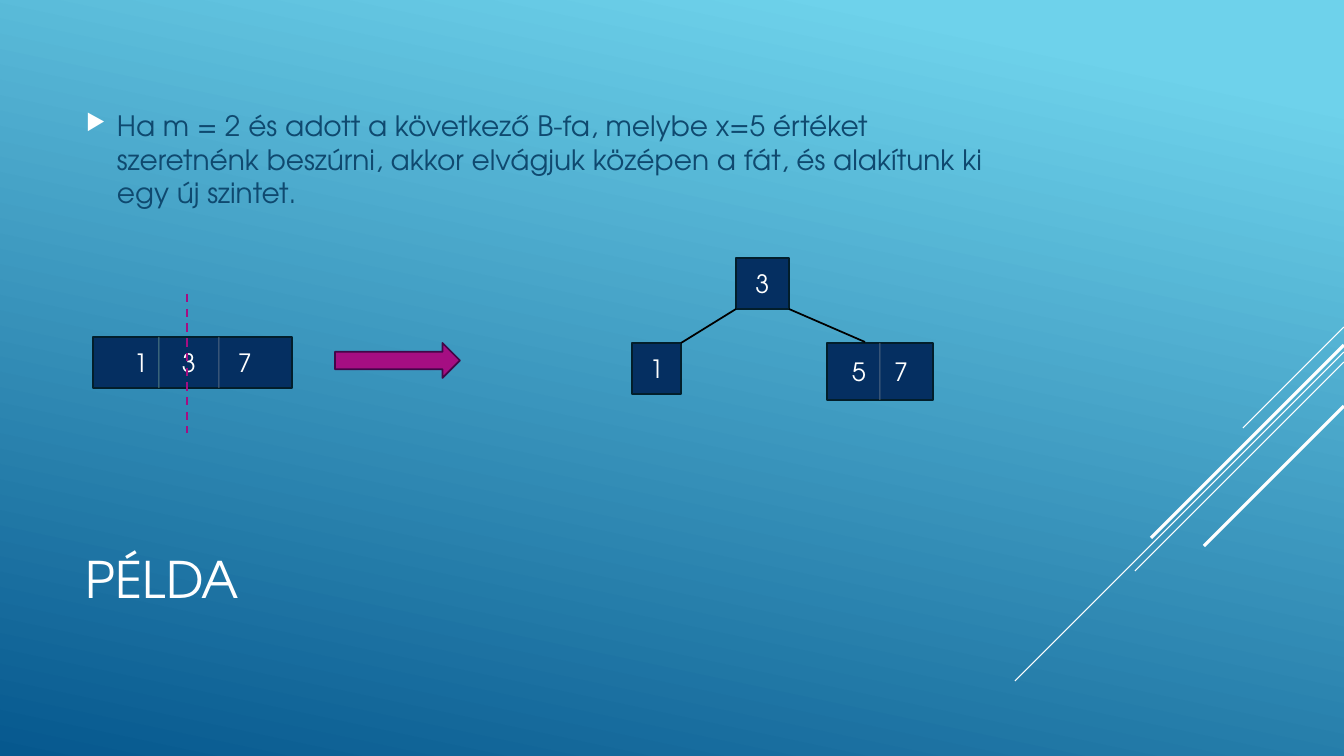
from dataclasses import dataclass
from typing import Optional

from lxml import etree
from pptx import Presentation
from pptx import util as u
from pptx.dml.color import RGBColor
from pptx.enum import dml, shapes, text
from pptx.oxml import ns

SCALE = 914400 / 100.8
FONT = "TeX Gyre Adventor"
WHITE = RGBColor(0xFF, 0xFF, 0xFF)
BLACK = RGBColor(0, 0, 0)
SKY = RGBColor(0x6E, 0xD2, 0xEB)
SEA = RGBColor(0x06, 0x58, 0x8E)
INK = RGBColor(0x0F, 0x49, 0x6F)
NAVY = RGBColor(0x05, 0x2F, 0x61)
EDGE = RGBColor(0x02, 0x1E, 0x2B)
PINK = RGBColor(0xA5, 0x0E, 0x82)
PLUM = RGBColor(0x42, 0x06, 0x48)
SAGE = RGBColor(0x8A, 0xB7, 0xA1)
GREY = RGBColor(0x89, 0x91, 0x9C)


@dataclass
class Box:
    x: int
    y: int
    w: int
    h: int


@dataclass
class Node:
    box: Box
    keys: str
    tabs: tuple[int, ...] = ()


@dataclass
class Line:
    x1: int
    y1: int
    x2: int
    y2: int
    color: RGBColor
    width: float
    dash: Optional[dml.MSO_LINE] = None
    alpha: int = 100


STREAKS = [
    Line(1344, 327, 1243, 428, WHITE, 0.75),
    Line(1344, 352, 1015, 681, WHITE, 0.75),
    Line(1344, 362, 1135, 571, WHITE, 0.75),
    Line(1344, 345, 1151, 538, WHITE, 2.25),
    Line(1344, 406, 1204, 546, WHITE, 2.25),
]
ROOT = Node(Box(736, 258, 53, 51), "3")
LEFT = Node(Box(632, 343, 49, 51), "1")
RIGHT = Node(Box(827, 343, 106, 57), "\t5\t7", (32, 74))
START = Node(Box(93, 337, 199, 51), "\t1\t3\t7", (48, 96, 152))
RULES = [
    Line(159, 337, 159, 388, SAGE, 0.75, alpha=60),
    Line(219, 337, 219, 388, GREY, 0.75, alpha=60),
    Line(187, 294, 187, 433, PINK, 1.5, dml.MSO_LINE.DASH),
]
SPLIT = Line(880, 343, 880, 400, GREY, 0.75, alpha=60)
LINKS = [
    Line(736, 309, 681, 343, BLACK, 1.25),
    Line(789, 309, 865, 342, BLACK, 1.25),
]
TITLE = Box(76, 495, 940, 166)
BODY = Box(76, 76, 940, 166)
ARROW = Box(335, 343, 125, 35)


def emu(px: int) -> int:
    return round(px * SCALE)


def area(box: Box) -> list[int]:
    return [emu(n) for n in (box.x, box.y, box.w, box.h)]


def add(parent, tag: str, **attrs: str):
    return etree.SubElement(parent, ns.qn(tag), attrs)


def write(shape, words: str, *, size: int, color: RGBColor = WHITE,
          center: bool = False, bullet: bool = False,
          tabs: tuple[int, ...] = ()) -> None:
    frame = shape.text_frame
    frame.word_wrap = True
    frame.vertical_anchor = text.MSO_ANCHOR.MIDDLE
    para = frame.paragraphs[0]
    para.alignment = text.PP_ALIGN.CENTER if center else text.PP_ALIGN.LEFT
    run = para.add_run()
    run.text = words
    props = para._p.get_or_add_pPr()
    if bullet:
        props.set("marL", str(emu(31)))
        props.set("indent", str(-emu(31)))
        add(add(props, "a:buClr"), "a:srgbClr", val=str(WHITE))
        add(props, "a:buSzPct", val="80000")
        add(props, "a:buChar", char="▶")
    if tabs:
        frame.margin_left = frame.margin_right = 0
        stops = add(props, "a:tabLst")
        for stop in tabs:
            add(stops, "a:tab", pos=str(emu(stop)), algn="ctr")
    run.font.name = FONT
    run.font.size = u.Pt(size)
    run.font.color.rgb = color


def draw_shape(slide, kind: shapes.MSO_SHAPE, box: Box, fill: RGBColor,
               edge: RGBColor):
    shape = slide.shapes.add_shape(kind, *area(box))
    shape.shadow.inherit = False
    shape.fill.solid()
    shape.fill.fore_color.rgb = fill
    shape.line.color.rgb = edge
    shape.line.width = u.Pt(1.25)
    return shape


def draw_node(slide, node: Node):
    shape = draw_shape(slide, shapes.MSO_SHAPE.RECTANGLE, node.box, NAVY, EDGE)
    write(shape, node.keys, size=18, center=not node.tabs, tabs=node.tabs)
    return shape


def draw_line(slide, line: Line):
    ends = [emu(n) for n in (line.x1, line.y1, line.x2, line.y2)]
    wire = slide.shapes.add_connector(shapes.MSO_CONNECTOR.STRAIGHT, *ends)
    wire.line.color.rgb = line.color
    wire.line.width = u.Pt(line.width)
    if line.dash:
        wire.line.dash_style = line.dash
    props = wire.element.spPr
    if line.alpha < 100:
        tint = props.find(".//" + ns.qn("a:srgbClr"))
        add(tint, "a:alpha", val=str(line.alpha * 1000))
    add(props, "a:effectLst")
    return wire


def paint(slide) -> None:
    fill = slide.background.fill
    fill.gradient()
    fill.gradient_angle = 258
    for stop, place, color in zip(fill.gradient_stops, (0.1, 1), (SKY, SEA)):
        stop.position = place
        stop.color.rgb = color


def main() -> None:
    deck = Presentation()
    deck.slide_width, deck.slide_height = emu(1344), emu(756)
    slide = deck.slides.add_slide(deck.slide_layouts[6])
    paint(slide)
    for line in STREAKS:
        draw_line(slide, line)
    write(slide.shapes.add_textbox(*area(TITLE)), "PÉLDA", size=36)
    write(slide.shapes.add_textbox(*area(BODY)),
          "Ha m = 2 és adott a következő B-fa, melybe x=5 értéket "
          "szeretnénk beszúrni, akkor elvágjuk középen a fát, és "
          "alakítunk ki egy új szintet.", size=20, color=INK, bullet=True)
    draw_node(slide, START)
    for line in RULES:
        draw_line(slide, line)
    draw_shape(slide, shapes.MSO_SHAPE.RIGHT_ARROW, ARROW, PINK, PLUM)
    draw_node(slide, ROOT)
    draw_node(slide, LEFT)
    pair = draw_node(slide, RIGHT)
    split = draw_line(slide, SPLIT)
    split.begin_connect(pair, 0)
    split.end_connect(pair, 2)
    for line in LINKS:
        draw_line(slide, line)
    deck.save("out.pptx")


if __name__ == "__main__":
    main()
